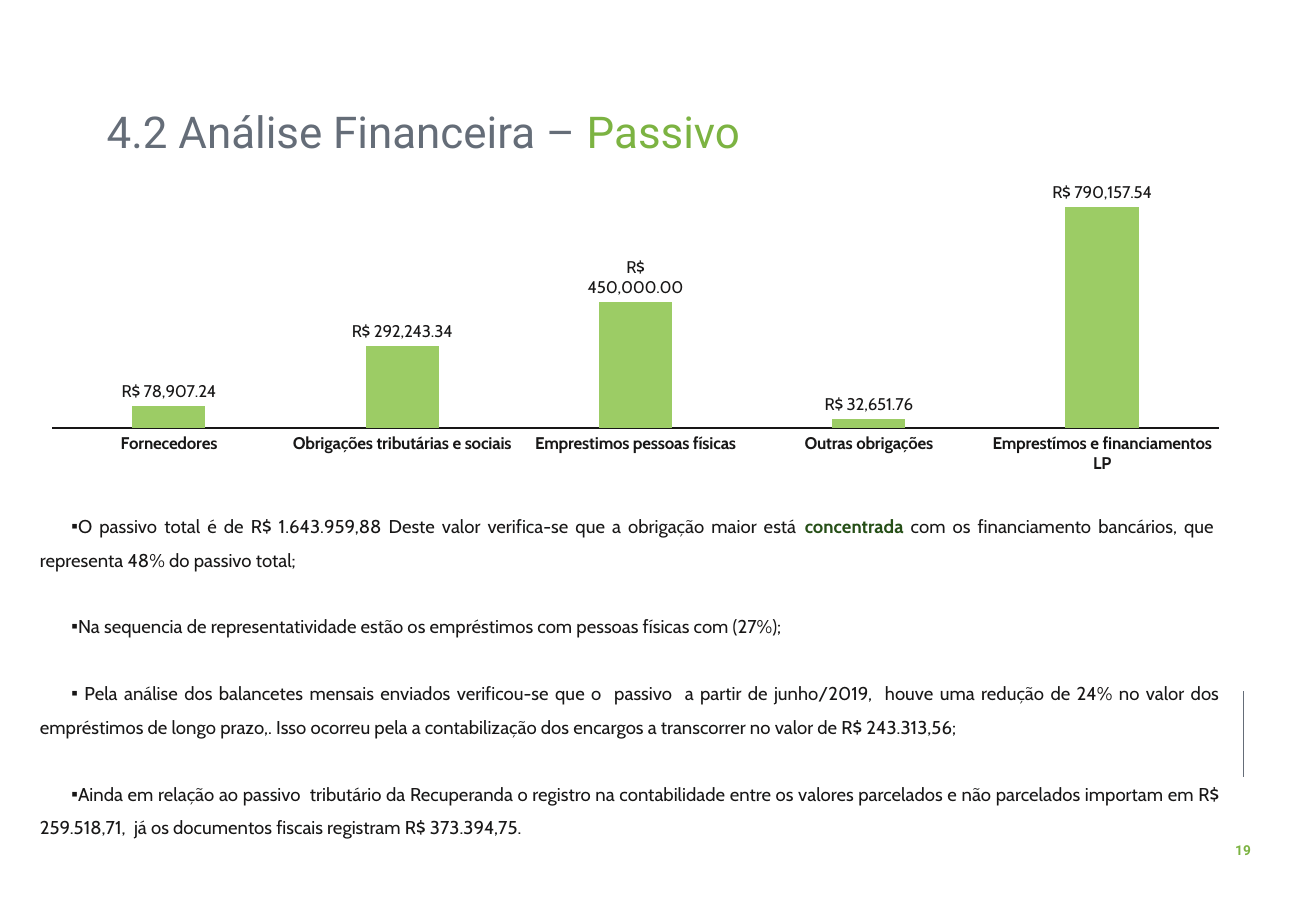
import pptx
import pptx.chart.data
import pptx.dml.color
import pptx.enum.chart
import pptx.enum.shapes
import pptx.enum.text
import pptx.oxml
import pptx.oxml.ns
import pptx.util
from pptx.util import Inches

ALIGN = pptx.enum.text.PP_ALIGN
INK, GREY, GREEN, DARK_GREEN, BAR_GREEN = "181717", "656D78", "7CB342", "264F17", "9CCC65"

PASSIVO = {
    "Fornecedores": 78907.24,
    "Obrigações tributárias e sociais": 292243.34,
    "Emprestimos pessoas físicas": 450000,
    "Outras obrigações": 32651.76,
    "Emprestímos e financiamentos LP": 790157.54,
}

COMENTARIOS = [
    [("O passivo total é de R$ 1.643.959,88 Deste valor verifica-se que a obrigação maior está ", {}),
     ("concentrada", {"color": DARK_GREEN, "bold": True}),
     (" com os financiamento bancários, que  representa 48% do passivo total;", {})],
    [("Na sequencia de representatividade estão os empréstimos com pessoas físicas com (27%);", {})],
    [(" Pela análise dos balancetes mensais enviados verificou-se que o  passivo  a partir de junho/2019,  "
      "houve uma redução de 24% no valor dos empréstimos de longo prazo,. Isso ocorreu pela a "
      "contabilização dos encargos a transcorrer no valor de R$ 243.313,56;", {})],
    [("Ainda em relação ao passivo  tributário da Recuperanda o registro na contabilidade entre os valores "
      "parcelados e não parcelados importam em R$ 259.518,71,  já os documentos fiscais registram "
      "R$ 373.394,75.", {})],
]


def rgb(value):
    return pptx.dml.color.RGBColor.from_string(value)


def xml(tag, content="", attributes=""):
    prefix = tag.split(":")[0]
    return pptx.oxml.parse_xml(
        f"<{tag} {pptx.oxml.ns.nsdecls(prefix)} {attributes}>{content}</{tag}>")


def set_font(font, name, size, color, bold=False):
    values = {"name": name, "size": pptx.util.Pt(size), "bold": bold}
    for attribute, value in values.items():
        setattr(font, attribute, value)
    font.color.rgb = rgb(color)


class ReportSlide:
    heading_font, body_font = "Roboto", "Cabin"

    def __init__(self, presentation):
        self.slide = presentation.slides.add_slide(presentation.slide_layouts[6])

    def text(self, box, paragraphs, font, size, color, wrap=True, bullet=None, **layout):
        """Paragraphs are lists of (text, font changes); layout holds paragraph formats."""
        frame = self.slide.shapes.add_textbox(*map(Inches, box)).text_frame
        frame.word_wrap = wrap
        gap = layout.pop("gap", 0)
        for index, runs in enumerate(paragraphs):
            paragraph = frame.paragraphs[0] if index == 0 else frame.add_paragraph()
            if bullet:
                properties = paragraph._p.get_or_add_pPr()
                properties.set("marL", "0")
                properties.set("indent", str(Inches(0.26)))
                properties.append(xml("a:buFont", attributes='typeface="Arial"'))
                properties.append(xml("a:buChar", attributes=f'char="{bullet}"'))
            for attribute, value in layout.items():
                setattr(paragraph, attribute, value)
            if index:
                paragraph.space_before = pptx.util.Pt(gap)
            for words, changes in runs:
                run = paragraph.add_run()
                run.text = words
                set_font(run.font, **{"name": font, "size": size, "color": color, **changes})

    def line(self, start, end, color, width):
        rule = self.slide.shapes.add_connector(
            pptx.enum.shapes.MSO_CONNECTOR.STRAIGHT, *map(Inches, start + end))
        rule.line.color.rgb = rgb(color)
        rule.line.width = pptx.util.Pt(width)
        rule._element.spPr.append(xml("a:effectLst"))

    def column_chart(self, box, values):
        data = pptx.chart.data.CategoryChartData()
        data.categories = list(values)
        data.add_series("Passivo", list(values.values()))
        chart = self.slide.shapes.add_chart(
            pptx.enum.chart.XL_CHART_TYPE.COLUMN_CLUSTERED, *map(Inches, box), data).chart
        chart.has_legend = chart.has_title = False
        set_font(chart.font, self.body_font, 10, INK)

        amounts = chart.value_axis
        for attribute, value in {"visible": False, "has_major_gridlines": False,
                                 "minimum_scale": 0, "maximum_scale": 900000}.items():
            setattr(amounts, attribute, value)

        names = chart.category_axis
        names.major_tick_mark = pptx.enum.chart.XL_TICK_MARK.NONE
        names.format.line.color.rgb = rgb(INK)
        names.format.line.width = pptx.util.Pt(0.75)
        set_font(names.tick_labels.font, self.body_font, 10, INK, bold=True)

        plot = chart.plots[0]
        plot.gap_width, plot.overlap, plot.vary_by_categories = 219, -27, False
        bars = plot.series[0]
        bars.format.fill.solid()
        bars.format.fill.fore_color.rgb = rgb(BAR_GREEN)
        labels = bars.data_labels
        for attribute, value in {
                "show_value": True, "number_format": '"R$"\\ #,##0.00',
                "number_format_is_linked": False,
                "position": pptx.enum.chart.XL_LABEL_POSITION.OUTSIDE_END}.items():
            setattr(labels, attribute, value)
        set_font(labels.font, self.body_font, 10, INK)
        self.place_plot(chart, x=0.02, y=0.02, w=0.96, h=0.81)

    def place_plot(self, chart, **fractions):
        """Fix the inner plot area, as fractions of the chart."""
        area = chart._chartSpace.chart.plotArea
        for old in area.findall(pptx.oxml.ns.qn("c:layout")):
            area.remove(old)
        content = '<c:layoutTarget val="inner"/><c:xMode val="edge"/><c:yMode val="edge"/>'
        content += "".join(f'<c:{key} val="{value}"/>' for key, value in fractions.items())
        area.insert(0, xml("c:layout", f"<c:manualLayout>{content}</c:manualLayout>"))


def main():
    presentation = pptx.Presentation()
    presentation.slide_width, presentation.slide_height = Inches(10.83), Inches(7.5)
    report = ReportSlide(presentation)
    report.line((10.23, 5.69), (10.23, 6.4), GREY, 0.5)
    report.text((10.06, 6.88, 0.34, 0.24), [[("19", {"bold": True})]],
                report.heading_font, 8.1, GREEN, wrap=False, alignment=ALIGN.CENTER)
    report.text((0.78, 0.86, 8.18, 0.53),
                [[("4.2 Análise Financeira – ", {}), ("Passivo", {"color": GREEN})]],
                report.heading_font, 26, GREY, line_spacing=0.9)
    report.text((0.23, 4.1, 9.92, 2.85), COMENTARIOS, report.body_font, 11, INK,
                bullet="▪", alignment=ALIGN.JUSTIFY, line_spacing=1.5, gap=19.8)
    report.column_chart((0.23, 1.4, 10, 2.56), PASSIVO)
    presentation.save("out.pptx")


if __name__ == "__main__":
    main()
